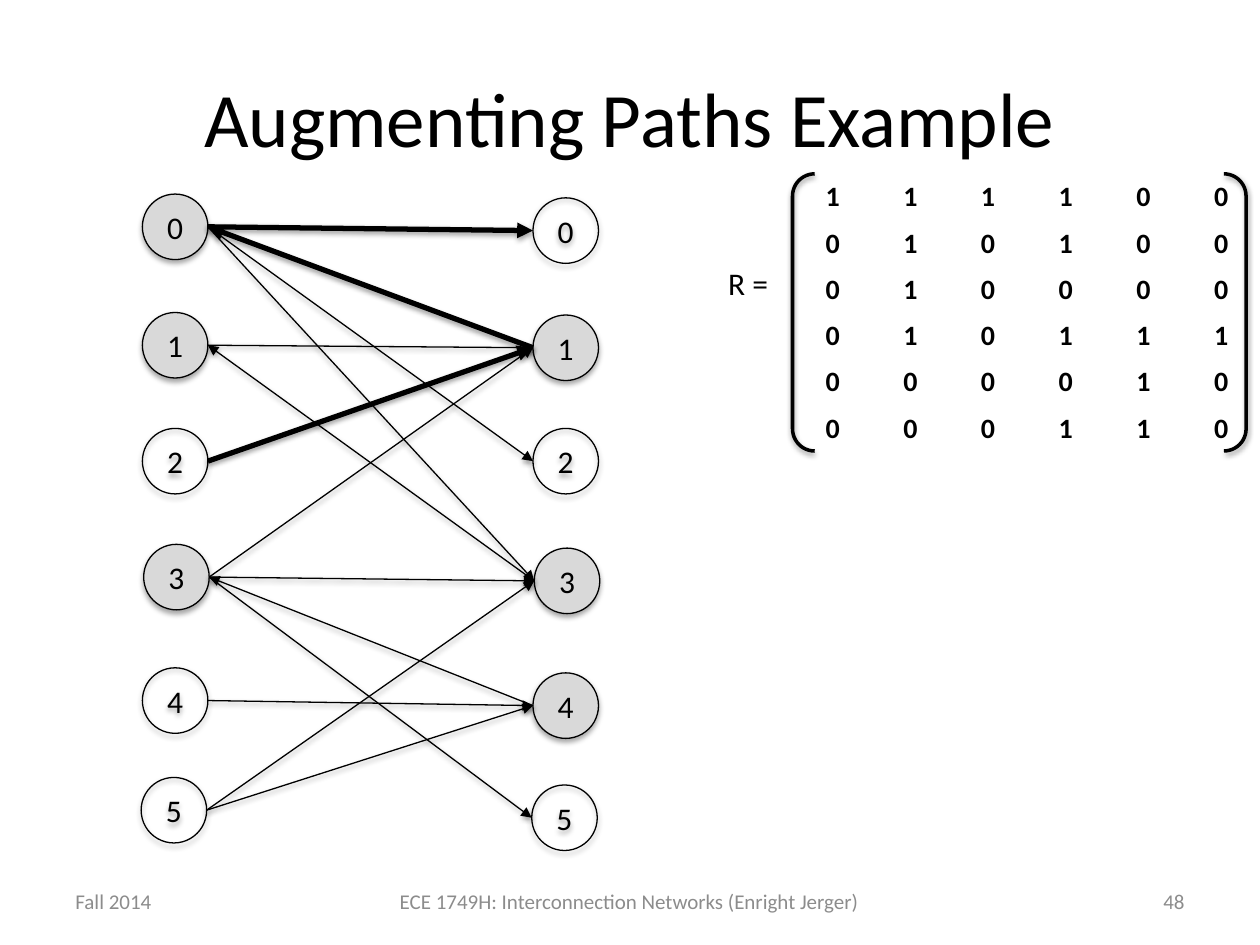
"""Build the slide on augmenting paths: a bipartite graph beside its request matrix."""
from dataclasses import dataclass

import lxml.etree
import pptx
import pptx.dml.color
import pptx.enum.shapes
import pptx.enum.text
import pptx.oxml
import pptx.oxml.ns
import pptx.util

Inches = pptx.util.Inches
Align = pptx.enum.text.PP_ALIGN
Anchor = pptx.enum.text.MSO_ANCHOR
Shapes = pptx.enum.shapes.MSO_SHAPE

FONT = "Calibri"
BLACK, WHITE, MATCHED, FOOTER = "000000", "FFFFFF", "D9D9D9", "8C8C8C"
DIAMETER = 0.52
THIN, THICK = 0.75, 3
MATRIX = ["111100", "010100", "010000", "010111", "000010", "000110"]


@dataclass(frozen=True)
class Label:
    text: str
    left: float
    top: float
    width: float
    height: float
    size: float
    color: str = BLACK
    align: Align = Align.LEFT
    anchor: Anchor = Anchor.MIDDLE
    wrap: bool = True


@dataclass(frozen=True)
class Node:
    name: str
    left: float
    top: float
    matched: bool = False

    @property
    def middle(self) -> float:
        return self.top + DIAMETER / 2


@dataclass(frozen=True)
class Edge:
    source: int
    target: int
    weight: float = THIN
    reverse: bool = False


LABELS = [
    Label("Augmenting Paths Example", 0.5, 0.3, 9, 1.25, 44, align=Align.CENTER),
    Label("Fall 2014", 0.5, 6.95, 2.33, 0.4, 12, FOOTER),
    Label("ECE 1749H: Interconnection Networks (Enright Jerger)",
          2.83, 6.95, 4.33, 0.4, 12, FOOTER, Align.CENTER),
    Label("48", 7.17, 6.95, 2.33, 0.4, 12, FOOTER, Align.RIGHT),
    Label("R =", 5.68, 2.05, 0.52, 0.4, 18, anchor=Anchor.TOP, wrap=False),
]
INPUTS = [
    Node("0", 1.13, 1.54, True), Node("1", 1.13, 2.48, True), Node("2", 1.13, 3.4),
    Node("3", 1.14, 4.32, True), Node("4", 1.13, 5.3), Node("5", 1.12, 6.17),
]
OUTPUTS = [
    Node("0", 4.23, 1.57), Node("1", 4.23, 2.5, True), Node("2", 4.23, 3.4),
    Node("3", 4.24, 4.35, True), Node("4", 4.23, 5.34, True), Node("5", 4.22, 6.23),
]
EDGES = [
    Edge(0, 0, THICK), Edge(0, 1, THICK, True), Edge(0, 2), Edge(0, 3),
    Edge(1, 1), Edge(1, 3, reverse=True), Edge(2, 1, THICK),
    Edge(3, 1), Edge(3, 3), Edge(3, 5), Edge(3, 4, reverse=True),
    Edge(4, 4), Edge(5, 3), Edge(5, 4),
]


def rgb(color: str) -> pptx.dml.color.RGBColor:
    return pptx.dml.color.RGBColor.from_string(color)


def write(frame, text: str, size: float, color: str, align: Align, bold: bool = False) -> None:
    paragraph = frame.paragraphs[0]
    paragraph.alignment = align
    run = paragraph.add_run()
    run.text = text
    run.font.name, run.font.size, run.font.bold = FONT, pptx.util.Pt(size), bold
    run.font.color.rgb = rgb(color)


def outline(shape, weight: float) -> None:
    shape.line.color.rgb = rgb(BLACK)
    shape.line.width = pptx.util.Pt(weight)


def cast_shadow(shape, opacity: int, distance: float) -> None:
    namespace = pptx.oxml.ns.nsdecls("a")
    shape._element.spPr.append(pptx.oxml.parse_xml(
        f'<a:effectLst {namespace}><a:outerShdw blurRad="{pptx.util.Pt(3.1)}" '
        f'dist="{pptx.util.Pt(distance)}" dir="5400000" rotWithShape="0">'
        f'<a:srgbClr val="{BLACK}"><a:alpha val="{opacity * 1000}"/></a:srgbClr>'
        '</a:outerShdw></a:effectLst>'))


def draw_label(slide, label: Label) -> None:
    box = slide.shapes.add_textbox(
        Inches(label.left), Inches(label.top), Inches(label.width), Inches(label.height))
    box.text_frame.word_wrap = label.wrap
    box.text_frame.vertical_anchor = label.anchor
    write(box.text_frame, label.text, label.size, label.color, label.align)


def draw_matrix(slide, rows: list[str]) -> None:
    table = slide.shapes.add_table(
        len(rows), len(rows[0]), Inches(6.3), Inches(1.38), Inches(3.7), Inches(2.2)).table
    table.first_row = table.horz_banding = False
    for row_index, row in enumerate(rows):
        for column_index, value in enumerate(row):
            cell = table.cell(row_index, column_index)
            cell.fill.solid()
            cell.fill.fore_color.rgb = rgb(WHITE)
            write(cell.text_frame, value, 16, BLACK, Align.CENTER, bold=True)
    brackets = slide.shapes.add_shape(
        Shapes.DOUBLE_BRACKET, Inches(6.29), Inches(1.38), Inches(3.6), Inches(2.2))
    brackets.adjustments[0] = 0.08
    brackets.fill.background()
    outline(brackets, 2)
    cast_shadow(brackets, 38, 1.6)


def draw_node(slide, node: Node) -> None:
    circle = slide.shapes.add_shape(
        Shapes.OVAL, Inches(node.left), Inches(node.top), Inches(DIAMETER), Inches(DIAMETER))
    if node.matched:
        circle.fill.solid()
        circle.fill.fore_color.rgb = rgb(MATCHED)
    else:
        circle.fill.background()
    outline(circle, THIN)
    cast_shadow(circle, 35, 1.8)
    circle.text_frame.vertical_anchor = Anchor.MIDDLE
    write(circle.text_frame, node.name, 18, BLACK, Align.CENTER)


def draw_edge(slide, edge: Edge) -> None:
    source, target = INPUTS[edge.source], OUTPUTS[edge.target]
    line = slide.shapes.add_connector(
        pptx.enum.shapes.MSO_CONNECTOR.STRAIGHT,
        Inches(source.left + DIAMETER), Inches(source.middle),
        Inches(target.left), Inches(target.middle))
    outline(line, edge.weight)
    arrow_end = "a:headEnd" if edge.reverse else "a:tailEnd"
    lxml.etree.SubElement(
        line.line._get_or_add_ln(), pptx.oxml.ns.qn(arrow_end), type="triangle")
    cast_shadow(line, 38, 1.6)


def main() -> None:
    presentation = pptx.Presentation()
    presentation.slide_width, presentation.slide_height = Inches(10), Inches(7.5)
    slide = presentation.slides.add_slide(presentation.slide_layouts[6])
    for label in LABELS:
        draw_label(slide, label)
    draw_matrix(slide, MATRIX)
    for node in INPUTS + OUTPUTS:
        draw_node(slide, node)
    for edge in EDGES:
        draw_edge(slide, edge)
    presentation.save("out.pptx")


if __name__ == "__main__":
    main()
